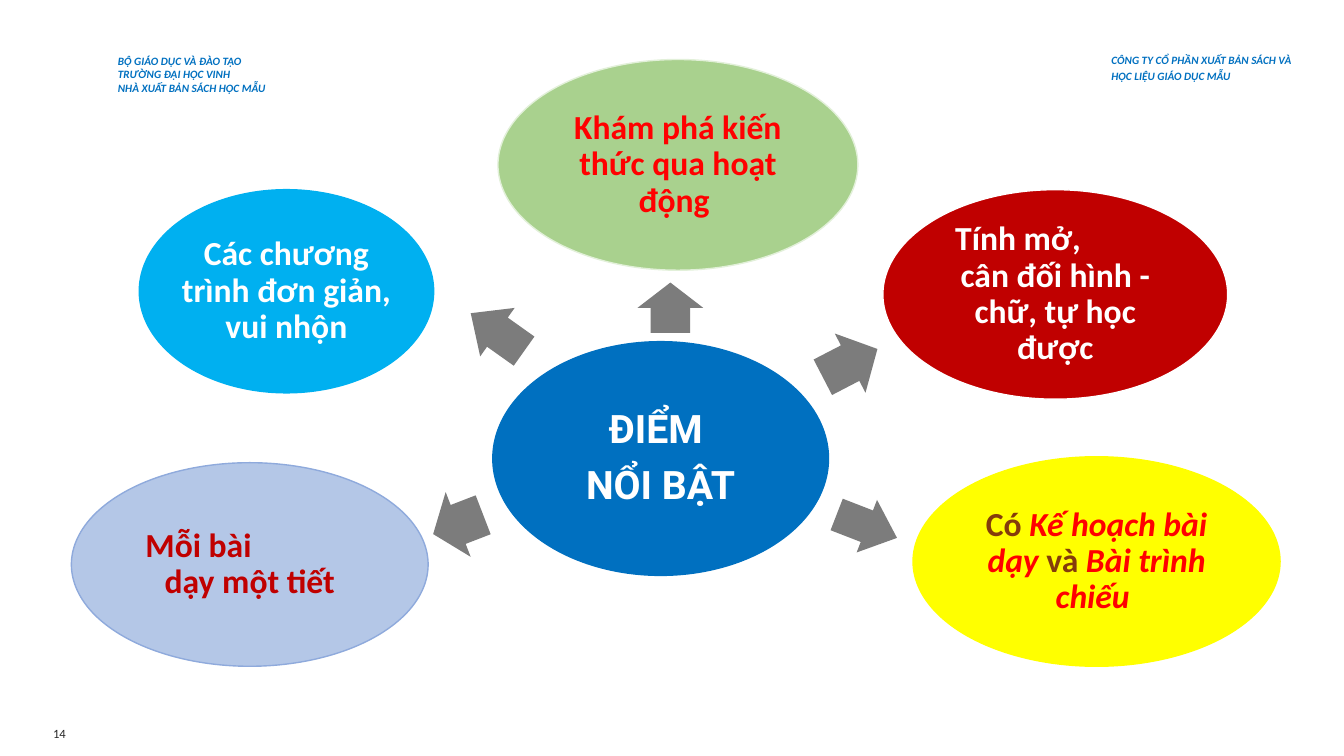
from dataclasses import dataclass

from pptx import Presentation
from pptx.dml.color import RGBColor
from pptx.enum.shapes import MSO_SHAPE
from pptx.enum.text import MSO_ANCHOR, PP_ALIGN
from pptx.util import Cm, Pt

OVAL, ARROW = MSO_SHAPE.OVAL, MSO_SHAPE.RIGHT_ARROW
LEFT, CENTER = PP_ALIGN.LEFT, PP_ALIGN.CENTER
MIDDLE, BOTTOM = MSO_ANCHOR.MIDDLE, MSO_ANCHOR.BOTTOM


@dataclass(frozen=True)
class Theme:
    body_font: str = "Calibri"
    hub_font: str = "Roboto"
    hub_size: int = 28
    bubble_size: int = 24
    header_size: int = 8
    number_size: int = 9
    white: str = "FFFFFF"
    blue: str = "0070C0"
    sky: str = "00B0F0"
    green: str = "A9D18E"
    pale_green: str = "E2F0D9"
    dark_red: str = "C00000"
    red: str = "FF0000"
    yellow: str = "FFFF00"
    brown: str = "843C0B"
    lilac: str = "B4C7E7"
    lilac_edge: str = "8FAADC"
    gray: str = "7C7C7C"
    ink: str = "262626"


THEME = Theme()

# Boxes are left, top, width, height in centimetres.
# A run is text, colour, italic; a paragraph is alignment, runs.
HUB = {
    "box": (12.42, 8.61, 8.46, 5.89), "fill": THEME.blue, "line": THEME.blue,
    "paragraphs": [(CENTER, [("ĐIỂM ", THEME.white, False)]),
                   (CENTER, [("NỔI BẬT", THEME.white, False)])],
}
BUBBLES = [
    {"box": (12.55, 1.5, 9.07, 5.31), "fill": THEME.green, "line": THEME.pale_green,
     "paragraphs": [(CENTER, [("Khám phá kiến thức qua hoạt động ", THEME.red, False)])]},
    {"box": (22.25, 4.78, 8.69, 5.28), "fill": THEME.dark_red, "line": THEME.white,
     "paragraphs": [(LEFT, [("Tính mở,", THEME.white, False)]),
                    (CENTER, [("cân đối hình - chữ, tự học được", THEME.white, False)])]},
    {"box": (23.01, 11.51, 9.25, 5.28), "fill": THEME.yellow, "line": THEME.yellow,
     "paragraphs": [(CENTER, [("Có ", THEME.brown, False),
                              ("Kế hoạch bài dạy ", THEME.red, True),
                              ("và ", THEME.brown, False),
                              ("Bài trình chiếu ", THEME.red, True)])]},
    {"box": (1.8, 11.66, 8.99, 5.13), "fill": THEME.lilac, "line": THEME.lilac_edge,
     "paragraphs": [(LEFT, [("Mỗi bài", THEME.dark_red, False)]),
                    (CENTER, [("dạy một tiết", THEME.dark_red, False)])]},
    {"box": (3.51, 4.78, 7.42, 5.12), "fill": THEME.sky, "line": THEME.sky, "wrap": False,
     "paragraphs": [(CENTER, [(line, THEME.white, False)])
                    for line in ("Các chương", "trình đơn giản,", "vui nhộn")]},
]
ARROWS = [  # box, rotation in degrees
    ((16.26, 6.93, 1.27, 1.65), 270),
    ((20.65, 8.31, 1.55, 1.68), 332.6),
    ((21.03, 12.55, 1.63, 1.42), 21.2),
    ((11.71, 7.62, 1.65, 1.5), 215.4),
    ((10.87, 12.34, 1.35, 1.75), 158.9),
]
LEFT_HEADER = ["BỘ GIÁO DỤC VÀ ĐÀO TẠO", "TRƯỜNG ĐẠI HỌC VINH", "NHÀ XUẤT BẢN SÁCH HỌC MẪU"]
RIGHT_HEADER = ["CÔNG TY CỔ PHẦN XUẤT BẢN SÁCH VÀ HỌC LIỆU GIÁO DỤC MẪU"]
LEFT_INDENT = Cm(0.55)


def lengths(box):
    return [Cm(value) for value in box]


def add_run(paragraph, text, color, size, font=THEME.body_font, bold=True, italic=False):
    run = paragraph.add_run()
    run.text = text
    run.font.name = font
    run.font.size = Pt(size)
    run.font.bold = bold
    run.font.italic = italic
    run.font.color.rgb = RGBColor.from_string(color)


def paragraphs_for(frame, items):
    """Yield one paragraph of the frame with each item."""
    for index, item in enumerate(items):
        yield (frame.add_paragraph() if index else frame.paragraphs[0]), item


def add_filled(slide, kind, box, fill):
    shape = slide.shapes.add_shape(kind, *lengths(box))
    shape.shadow.inherit = False
    shape.fill.solid()
    shape.fill.fore_color.rgb = RGBColor.from_string(fill)
    return shape


def add_bubble(slide, bubble, size, font=THEME.body_font, space_after=0):
    shape = add_filled(slide, OVAL, bubble["box"], bubble["fill"])
    shape.line.color.rgb = RGBColor.from_string(bubble["line"])
    shape.line.width = Pt(1)
    frame = shape.text_frame
    frame.word_wrap = bubble.get("wrap", True)
    frame.vertical_anchor = MIDDLE
    frame.margin_left = frame.margin_right = frame.margin_top = frame.margin_bottom = 0
    for paragraph, (alignment, runs) in paragraphs_for(frame, bubble["paragraphs"]):
        paragraph.alignment = alignment
        paragraph.line_spacing = 0.9
        paragraph.space_after = Pt(space_after)
        if alignment == LEFT:
            paragraph._p.get_or_add_pPr().set("marL", str(LEFT_INDENT))
        for text, color, italic in runs:
            add_run(paragraph, text, color, size, font, italic=italic)


def add_arrow(slide, box, rotation):
    """Add an arrow whose head takes half of its length."""
    shape = add_filled(slide, ARROW, box, THEME.gray)
    shape.line.fill.background()
    width, height = box[2:]
    shape.adjustments[0] = 0.6
    shape.adjustments[1] = 0.5 * width / min(width, height)
    shape.rotation = rotation


def add_label(slide, box, lines, size, color, anchor, emphasis=True, line_spacing=1.0):
    frame = slide.shapes.add_textbox(*lengths(box)).text_frame
    frame.word_wrap = True
    frame.vertical_anchor = anchor
    for paragraph, line in paragraphs_for(frame, lines):
        paragraph.line_spacing = line_spacing
        add_run(paragraph, line, color, size, bold=emphasis, italic=emphasis)


def main():
    presentation = Presentation()
    presentation.slide_width, presentation.slide_height = Cm(33.87), Cm(19.05)
    slide = presentation.slides.add_slide(presentation.slide_layouts[6])

    add_label(slide, (1.09, 18.14, 1.6, 0.69), ["14"], THEME.number_size, THEME.ink,
              MIDDLE, emphasis=False)
    add_label(slide, (27.76, 1.17, 5.51, 1.04), RIGHT_HEADER, THEME.header_size, THEME.blue,
              BOTTOM, line_spacing=1.2)
    add_label(slide, (2.72, 1.24, 4.7, 1.27), LEFT_HEADER, THEME.header_size, THEME.blue, BOTTOM)

    add_bubble(slide, HUB, THEME.hub_size, THEME.hub_font, space_after=9.8)
    for bubble in BUBBLES:
        add_bubble(slide, bubble, THEME.bubble_size)
    for box, rotation in ARROWS:
        add_arrow(slide, box, rotation)

    presentation.save("out.pptx")


if __name__ == "__main__":
    main()
